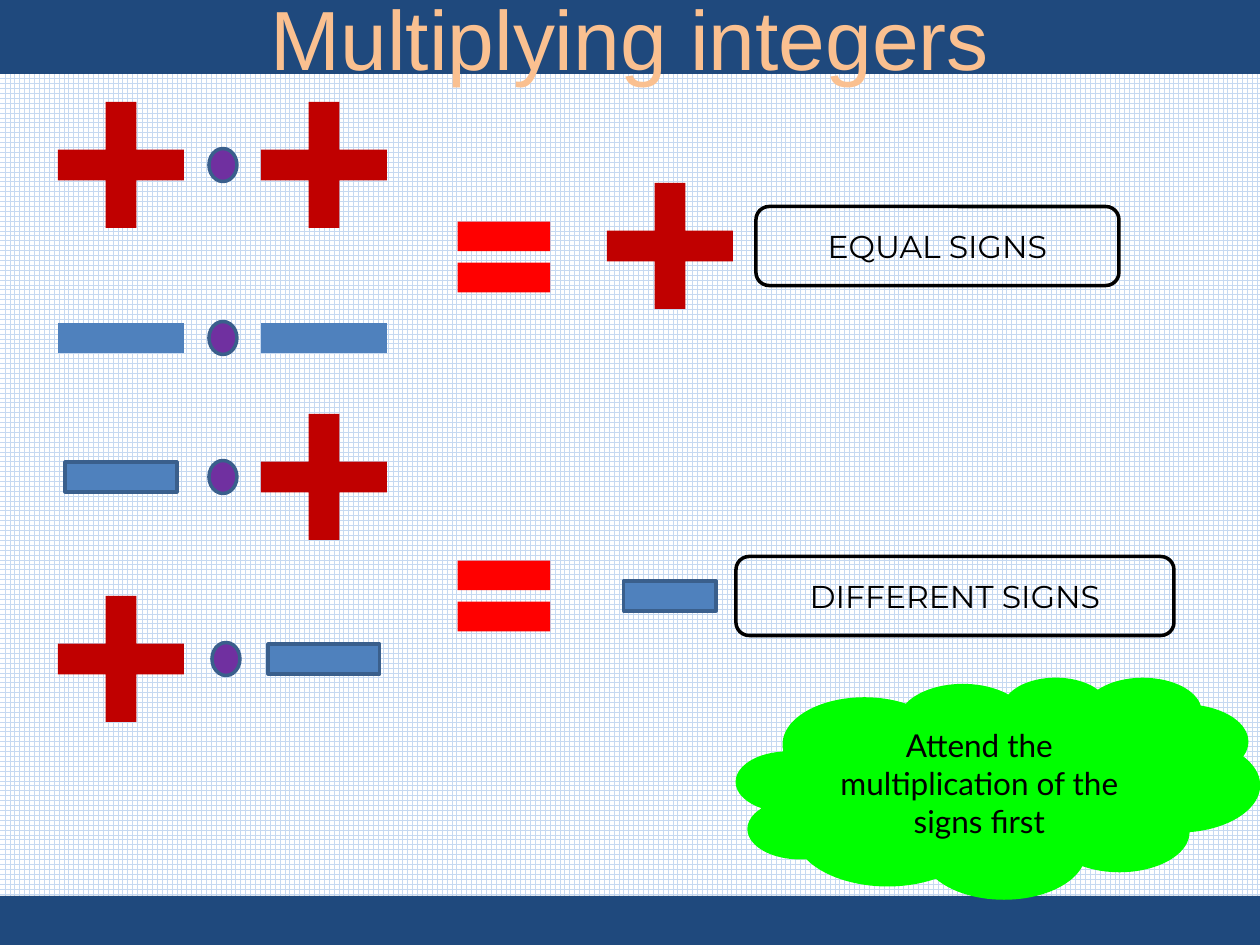
import pptx
import pptx.util
from pptx.dml.color import RGBColor
from pptx.enum.dml import MSO_PATTERN
from pptx.enum.shapes import MSO_SHAPE
from pptx.enum.text import MSO_ANCHOR, PP_ALIGN

# Theme
THEME = {
    "navy": "1F497D", "peach": "FAC090", "grid": "C6D9F1", "white": "FFFFFF",
    "black": "000000", "green": "00FF00", "crimson": "C00000", "red": "FF0000",
    "blue": "4F81BD", "edge": "3A5F8C", "purple": "7030A0",
    "title_size": 48, "body_size": 18, "line_width": 2,
    "title_font": "Arial", "note_font": "Lato", "label_font": "Montserrat",
}

# Content
WIDTH, HEIGHT = 1260, 945
TITLE = "Multiplying integers"
NOTE = "Attend the multiplication of the signs first"

# Symbol: preset, width, height, fill, outline, adjustments
SYMBOLS = {
    "plus": (MSO_SHAPE.CROSS, 126, 126, "crimson", None, [0.378]),
    "bar": (MSO_SHAPE.FLOWCHART_PROCESS, 126, 29, "blue", None, []),
    "minus": (MSO_SHAPE.MATH_MINUS, 152, 126, "blue", "edge", []),
    "short minus": (MSO_SHAPE.MATH_MINUS, 126, 126, "blue", "edge", []),
    "dot": (MSO_SHAPE.OVAL, 28, 33, "purple", "edge", []),
    "equals": (MSO_SHAPE.MATH_EQUAL, 126, 126, "red", None, [0.235, 0.091]),
}

# Product: left sign, right sign, row centre, dot centre
PRODUCTS = [
    ("plus", "plus", 165, 223),
    ("bar", "bar", 338, 223),
    ("minus", "plus", 477, 223),
    ("plus", "minus", 659, 226),
]
LEFT_CENTRE, RIGHT_CENTRE = 121, 324

# Rule: resulting sign, row centre, equals row centre, label, label left, label width
RULES = [
    ("plus", 246, 257, "EQUAL SIGNS", 756, 363),
    ("short minus", 596, 596, "DIFFERENT SIGNS", 736, 438),
]
EQUALS_CENTRE, RESULT_CENTRE, LABEL_HEIGHT = 504, 670, 79


def px(value):
    return pptx.util.Emu(int(value * 914400 / 126))


def colour(name):
    return RGBColor.from_string(THEME[name])


def add_shape(slide, preset, box, fill=None, line=None, adjustments=()):
    shape = slide.shapes.add_shape(preset, *[px(value) for value in box])
    shape.shadow.inherit = False
    for index, value in enumerate(adjustments):
        shape.adjustments[index] = value
    if fill:
        shape.fill.solid()
        shape.fill.fore_color.rgb = colour(fill)
    else:
        shape.fill.background()
    if line:
        shape.line.color.rgb = colour(line)
        shape.line.width = pptx.util.Pt(THEME["line_width"])
    else:
        shape.line.fill.background()
    return shape


def add_symbol(slide, name, centre_x, centre_y):
    preset, width, height, fill, line, adjustments = SYMBOLS[name]
    box = (centre_x - width / 2, centre_y - height / 2, width, height)
    add_shape(slide, preset, box, fill, line, adjustments)


def write(shape, text, font, size="body_size", text_colour="black"):
    frame = shape.text_frame
    frame.word_wrap = True
    frame.vertical_anchor = MSO_ANCHOR.MIDDLE
    paragraph = frame.paragraphs[0]
    paragraph.text = text
    paragraph.alignment = PP_ALIGN.CENTER
    paragraph.font.name = THEME[font]
    paragraph.font.size = pptx.util.Pt(THEME[size])
    paragraph.font.color.rgb = colour(text_colour)


def main():
    presentation = pptx.Presentation()
    presentation.slide_width, presentation.slide_height = px(WIDTH), px(HEIGHT)
    slide = presentation.slides.add_slide(presentation.slide_layouts[6])

    # Grid background
    background = slide.background.fill
    background.patterned()
    background.pattern = MSO_PATTERN.LARGE_GRID
    background.fore_color.rgb = colour("grid")
    background.back_color.rgb = colour("white")

    # Title band, footer band and note
    title = add_shape(slide, MSO_SHAPE.RECTANGLE, (0, 0, WIDTH, 74), "navy")
    write(title, TITLE, "title_font", "title_size", "peach")
    add_shape(slide, MSO_SHAPE.RECTANGLE, (0, 896, WIDTH, 49), "navy")
    cloud = add_shape(slide, MSO_SHAPE.CLOUD, (736, 677, 524, 222), "green")
    write(cloud, NOTE, "note_font")

    # Products of signs
    for left, right, row, dot in PRODUCTS:
        add_symbol(slide, left, LEFT_CENTRE, row)
        add_symbol(slide, "dot", dot, row)
        add_symbol(slide, right, RIGHT_CENTRE, row)

    # Results and their labels
    for sign, row, equals_row, text, left, width in RULES:
        add_symbol(slide, "equals", EQUALS_CENTRE, equals_row)
        add_symbol(slide, sign, RESULT_CENTRE, row)
        box = (left, row - LABEL_HEIGHT / 2, width, LABEL_HEIGHT)
        label = add_shape(slide, MSO_SHAPE.ROUNDED_RECTANGLE, box, line="black")
        write(label, text, "label_font")

    presentation.save("out.pptx")


if __name__ == "__main__":
    main()
